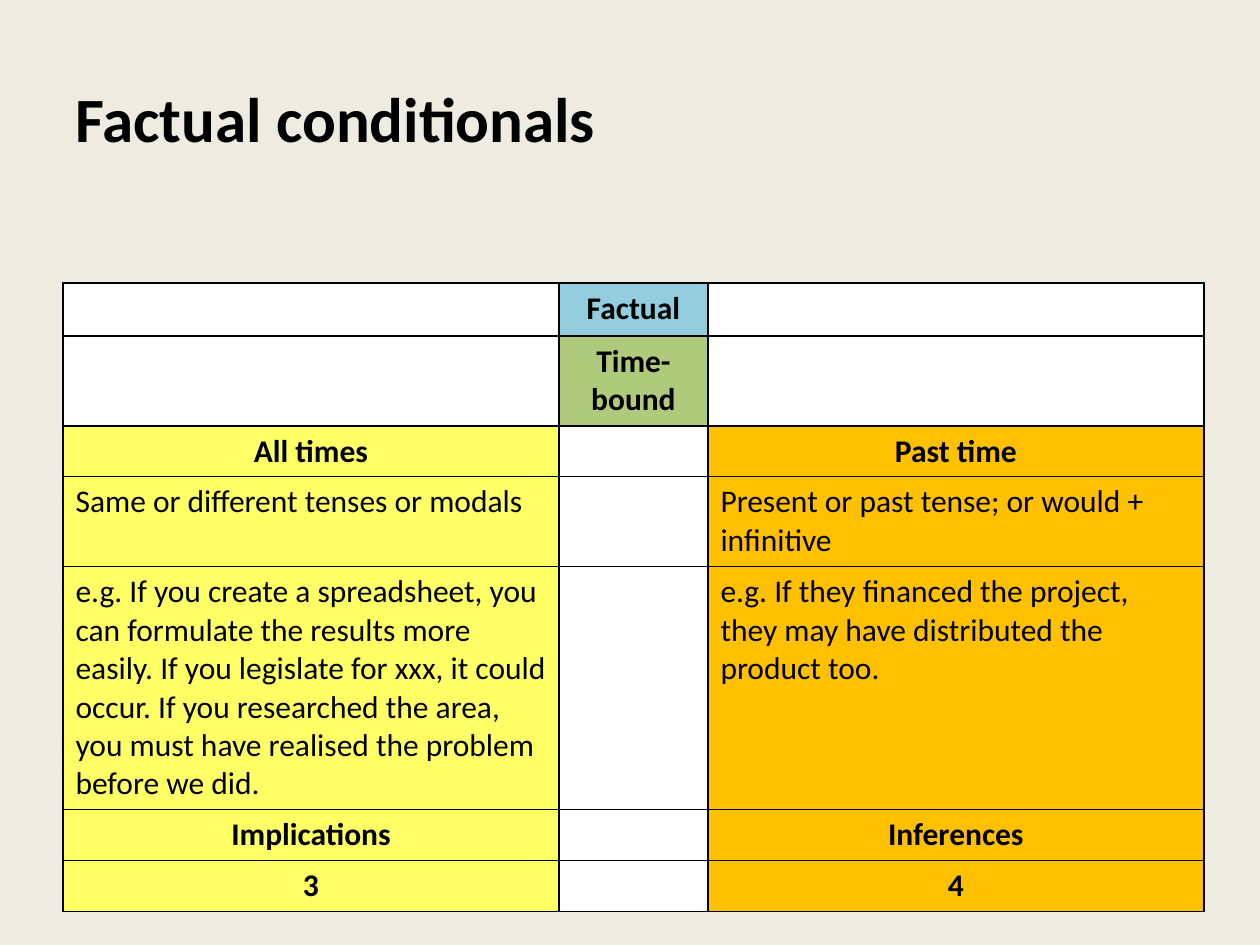
"""Build the slide on factual conditionals with its comparison table."""
from lxml import etree
from pptx import Presentation
from pptx.dml.color import RGBColor
from pptx.enum.text import MSO_ANCHOR, PP_ALIGN
from pptx.oxml.ns import qn
from pptx.util import Pt

PX = 914400 // 126
LEFT, CENTER = PP_ALIGN.LEFT, PP_ALIGN.CENTER
MIDDLE = MSO_ANCHOR.MIDDLE
COLORS = {
    "background": "EEECE1", "text": "000000", "border": "000000", "white": "FFFFFF",
    "blue": "93CDDD", "green": "B0CA7C", "yellow": "FFFF66", "orange": "FFC000",
}
HEADING = {"size": Pt(18), "bold": True}
BODY = {"size": Pt(18), "bold": False}
TITLE = {"size": Pt(36), "bold": True}
COLUMN_WIDTHS = [496, 149, 496]
EMPTY = ("", "white")

ROWS = [
    (53, HEADING, [EMPTY, ("Factual", "blue"), EMPTY]),
    (90, HEADING, [EMPTY, ("Time-bound", "green"), EMPTY]),
    (50, HEADING, [("All times", "yellow"), EMPTY, ("Past time", "orange")]),
    (90, BODY, [
        ("Same or different tenses or modals", "yellow"), EMPTY,
        ("Present or past tense; or would + infinitive", "orange"),
    ]),
    (243, BODY, [
        ("e.g. If you create a spreadsheet, you can formulate the results more easily. "
         "If you legislate for xxx, it could occur. If you researched the area, "
         "you must have realised the problem before we did.", "yellow"), EMPTY,
        ("e.g. If they financed the project, they may have distributed "
         "the product too.", "orange"),
    ]),
    (51, HEADING, [("Implications", "yellow"), EMPTY, ("Inferences", "orange")]),
    (51, HEADING, [("3", "yellow"), EMPTY, ("4", "orange")]),
]


def write(frame, text, style, alignment):
    para = frame.paragraphs[0]
    para.alignment = alignment
    span = para.add_run()
    span.text = text
    span.font.name = "Calibri"
    span.font.color.rgb = RGBColor.from_string(COLORS["text"])
    for name, value in style.items():
        setattr(span.font, name, value)


def paint_cell(cell, fill):
    properties = cell._tc.get_or_add_tcPr()
    for side in ("a:lnL", "a:lnR", "a:lnT", "a:lnB"):
        line = etree.SubElement(properties, qn(side), w=str(Pt(1)))
        solid = etree.SubElement(line, qn("a:solidFill"))
        etree.SubElement(solid, qn("a:srgbClr"), val=COLORS["border"])
    cell.fill.solid()
    cell.fill.fore_color.rgb = RGBColor.from_string(COLORS[fill])


deck = Presentation()
deck.slide_width, deck.slide_height = 1260 * PX, 945 * PX
slide = deck.slides.add_slide(deck.slide_layouts[6])
slide.background.fill.solid()
slide.background.fill.fore_color.rgb = RGBColor.from_string(COLORS["background"])

title_box = slide.shapes.add_textbox(63 * PX, 38 * PX, 1134 * PX, 159 * PX)
title_box.text_frame.word_wrap = True
title_box.text_frame.vertical_anchor = MIDDLE
write(title_box.text_frame, "Factual conditionals", TITLE, LEFT)

table_height = sum(height for height, style, cells in ROWS)
table = slide.shapes.add_table(
    len(ROWS), len(COLUMN_WIDTHS), 63 * PX, 283 * PX,
    sum(COLUMN_WIDTHS) * PX, table_height * PX,
).table
table.first_row = table.horz_banding = False
for column, width in zip(table.columns, COLUMN_WIDTHS):
    column.width = width * PX

for row, (height, style, cells) in zip(table.rows, ROWS):
    row.height = height * PX
    for cell, (text, fill) in zip(row.cells, cells):
        paint_cell(cell, fill)
        if text:
            write(cell.text_frame, text, style, CENTER if style is HEADING else LEFT)

deck.save("out.pptx")
